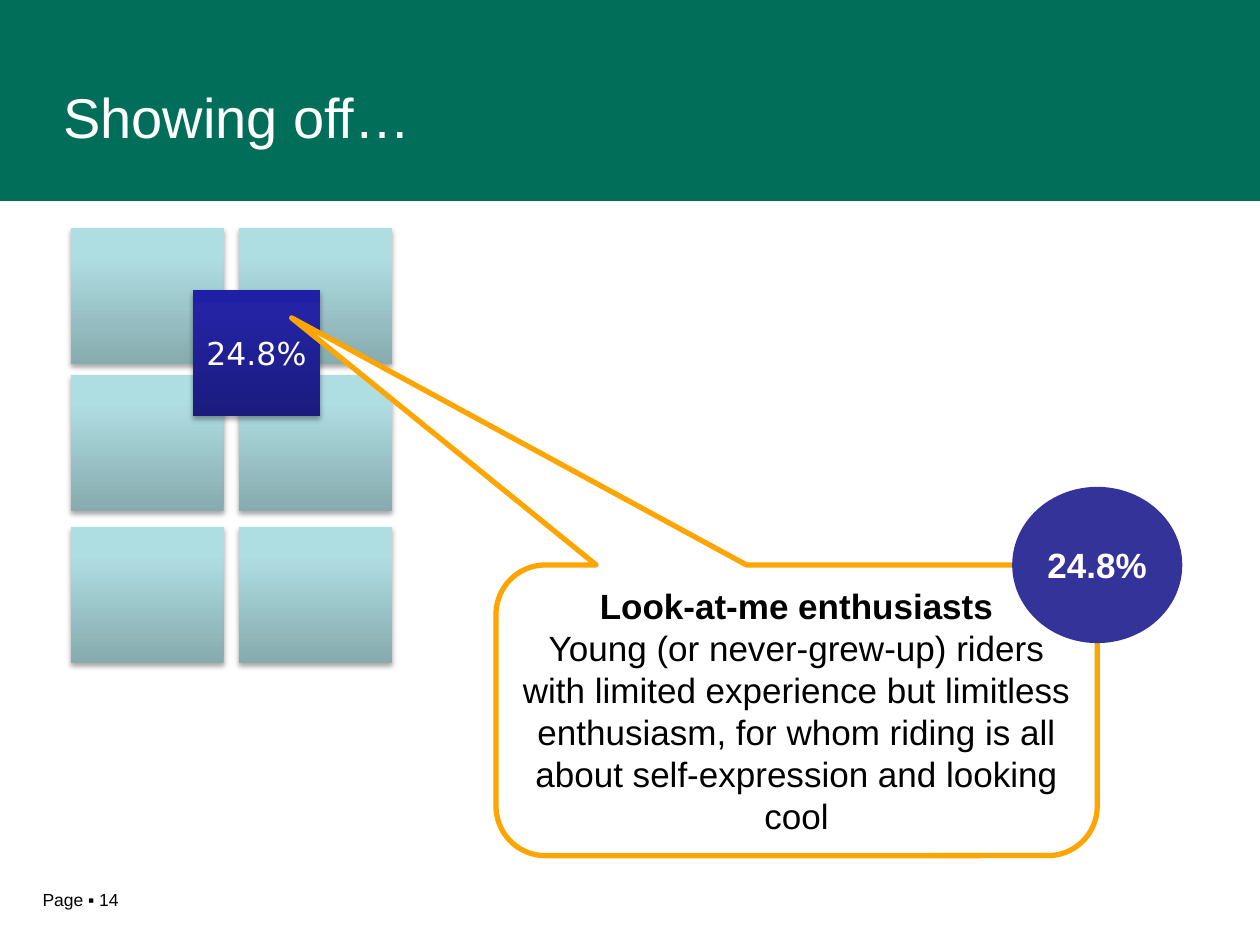
import copy

import lxml.etree
import pptx
import pptx.dml.color
import pptx.enum.shapes
import pptx.enum.text
import pptx.oxml.ns
import pptx.util

Cm = pptx.util.Cm
Pt = pptx.util.Pt
RGBColor = pptx.dml.color.RGBColor
Shape = pptx.enum.shapes.MSO_SHAPE
Align = pptx.enum.text.PP_ALIGN
Anchor = pptx.enum.text.MSO_ANCHOR
qn = pptx.oxml.ns.qn

GREEN = RGBColor(0x01, 0x6E, 0x59)
ORANGE = RGBColor(0xFE, 0xA5, 0x01)
INDIGO = RGBColor(0x33, 0x33, 0x99)
WHITE = RGBColor(0xFF, 0xFF, 0xFF)
BLACK = RGBColor(0x00, 0x00, 0x00)
TEAL_STOPS = (RGBColor(0x87, 0xAB, 0xAE), RGBColor(0xAF, 0xDE, 0xE2), RGBColor(0xAF, 0xE0, 0xE4))
NAVY_STOPS = (RGBColor(0x1B, 0x1B, 0x7E), RGBColor(0x23, 0x23, 0xA3), RGBColor(0x20, 0x20, 0xA6))
STOP_POSITIONS = (0, 0.8, 1)
SHARE = "24.8%"


def add_plain_shape(slide, kind, left, top, width, height, fill=None):
    shape = slide.shapes.add_shape(kind, Cm(left), Cm(top), Cm(width), Cm(height))
    shape.shadow.inherit = False
    shape.line.fill.background()
    if fill is not None:
        shape.fill.solid()
        shape.fill.fore_color.rgb = fill
    return shape


def write_paragraph(paragraph, text, size, color, bold=False, font="Arial", align=Align.CENTER):
    paragraph.text = text
    paragraph.alignment = align
    paragraph.font.size = Pt(size)
    paragraph.font.name = font
    paragraph.font.bold = bold
    paragraph.font.color.rgb = color


def add_tile(slide, left, top, width, height, colors):
    tile = add_plain_shape(slide, Shape.RECTANGLE, left, top, width, height)
    tile.fill.gradient()
    tile.fill.gradient_angle = 90
    properties = tile.element.spPr
    stop_list = properties.find(".//" + qn("a:gsLst"))
    stop_list.append(copy.deepcopy(stop_list[0]))
    for stop, position, color in zip(tile.fill.gradient_stops, STOP_POSITIONS, colors):
        stop.position = position
        stop.color.rgb = color
    shadow = lxml.etree.SubElement(
        properties.find(qn("a:effectLst")), qn("a:outerShdw"),
        blurRad=str(Pt(3.1)), dist=str(Pt(1.8)), dir="5400000", rotWithShape="0")
    shadow_color = lxml.etree.SubElement(shadow, qn("a:srgbClr"), val=str(BLACK))
    lxml.etree.SubElement(shadow_color, qn("a:alpha"), val="35000")
    return tile


def add_header(slide, left, top, width, height):
    band = add_plain_shape(slide, Shape.RECTANGLE, left, top, width, height, GREEN)
    title = slide.shapes.title
    title.element.addprevious(band.element)
    title.left, title.top = Cm(left + 1.27), Cm(top + 0.76)
    title.width, title.height = Cm(19.43), Cm(3.18)
    frame = title.text_frame
    frame.margin_left = frame.margin_right = 0
    frame.vertical_anchor = Anchor.MIDDLE
    write_paragraph(frame.paragraphs[0], "Showing off…", 32, WHITE, align=Align.LEFT)


def add_segment_grid(slide, left, top, width):
    tile_width, tile_height = 3.08, 2.74
    row_offsets = (0, 2.96, 6.02)
    for row_offset in row_offsets:
        for column_offset in (0, width - tile_width):
            add_tile(slide, left + column_offset, top + row_offset,
                     tile_width, tile_height, TEAL_STOPS)
    center = add_tile(slide, left + 2.46, top + 1.25, 2.56, 2.54, NAVY_STOPS)
    frame = center.text_frame
    frame.word_wrap = False
    frame.vertical_anchor = Anchor.MIDDLE
    write_paragraph(frame.paragraphs[0], SHARE, 18, WHITE, font="DejaVu Sans")


def add_segment_callout(slide, left, top, width, height):
    callout = add_plain_shape(slide, Shape.ROUNDED_RECTANGULAR_CALLOUT,
                              left, top, width, height, WHITE)
    for index, value in enumerate((-0.84, -1.35, 0.17)):
        callout.adjustments[index] = value
    callout.line.color.rgb = ORANGE
    callout.line.width = Pt(3)
    frame = callout.text_frame
    frame.word_wrap = True
    frame.margin_left = frame.margin_right = Cm(0.2)
    frame.vertical_anchor = Anchor.MIDDLE
    write_paragraph(frame.paragraphs[0], "Look-at-me enthusiasts", 20, BLACK, bold=True)
    write_paragraph(
        frame.add_paragraph(),
        "Young (or never-grew-up) riders with limited experience but limitless enthusiasm, "
        "for whom riding is all about self-expression and looking cool", 20, BLACK)

    badge_width, badge_height = 3.43, 3.15
    badge = add_plain_shape(slide, Shape.OVAL, left + width - badge_width / 2,
                            top - badge_height / 2, badge_width, badge_height, INDIGO)
    badge.text_frame.word_wrap = False
    badge.text_frame.vertical_anchor = Anchor.MIDDLE
    write_paragraph(badge.text_frame.paragraphs[0], SHARE, 20, WHITE, bold=True)


def add_page_label(slide, left, top, width, height):
    label = slide.shapes.add_textbox(Cm(left), Cm(top), Cm(width), Cm(height))
    label.text_frame.word_wrap = True
    write_paragraph(label.text_frame.paragraphs[0], "Page ▪ 14", 10, BLACK, align=Align.LEFT)


def main():
    presentation = pptx.Presentation()
    presentation.slide_width = Cm(25.4)
    presentation.slide_height = Cm(19.05)
    slide = presentation.slides.add_slide(presentation.slide_layouts[5])
    add_header(slide, 0, 0, 25.4, 4.05)
    add_page_label(slide, 0.61, 17.79, 3.73, 0.69)
    add_segment_grid(slide, 1.43, 4.6, 6.47)
    add_segment_callout(slide, 10, 11.39, 12.12, 5.86)
    presentation.save("out.pptx")


if __name__ == "__main__":
    main()
